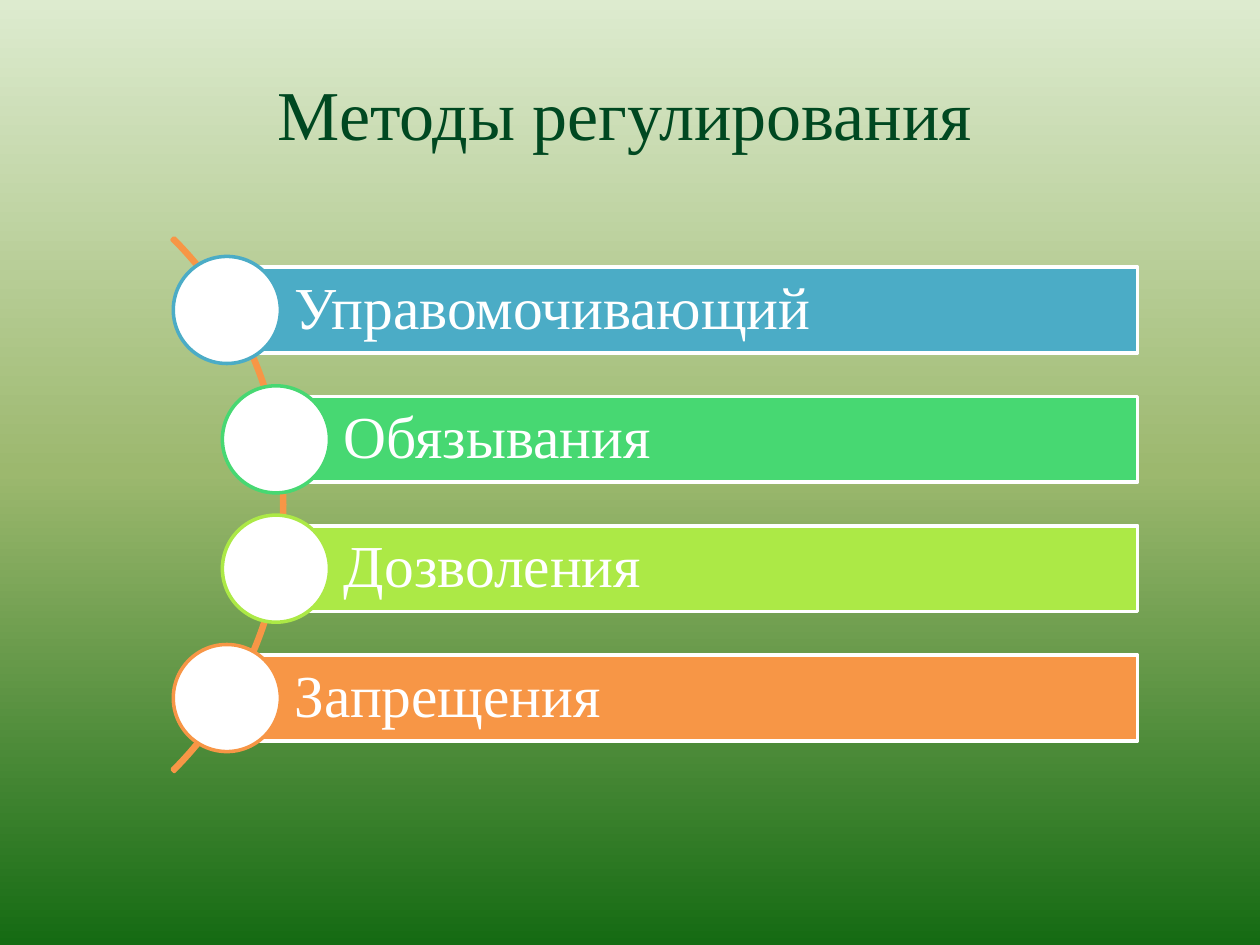
from lxml import etree
from pptx import Presentation
from pptx.dml.color import RGBColor
from pptx.enum import shapes, text
from pptx.oxml.ns import qn
from pptx.util import Inches, Pt

# Content
TITLE = "Методы регулирования"
METHODS = [  # label, colour, left edge of the bar
    ("Управомочивающий", "4BACC6", 1.8),
    ("Обязывания", "47D872", 2.19),
    ("Дозволения", "ACE946", 2.19),
    ("Запрещения", "F79646", 1.8),
]
BACKGROUND = [(0, "DDEBCF"), (50, "9CB86E"), (100, "156B13")]

# Layout in inches
FIRST_TOP, LAST_TOP = 2.12, 5.2
BAR_RIGHT, BAR_HEIGHT = 9.03, 0.68
CIRCLE = 0.85
ARC = (-3.73, 1.01, 5.99, 5.99)


def rgb(value):
    return RGBColor.from_string(value)


def add_solid(parent, color):
    fill = etree.SubElement(parent, qn("a:solidFill"))
    etree.SubElement(fill, qn("a:srgbClr"), val=color)


def add_shape(slide, kind, box, line, fill=None):
    sp = slide.shapes.add_shape(kind, *map(Inches, box))
    sp.shadow.inherit = False
    if fill:
        sp.fill.solid()
        sp.fill.fore_color.rgb = rgb(fill)
    else:
        sp.fill.background()
    sp.line.color.rgb = rgb(line)
    sp.line.width = Pt(2)
    return sp


def write(sp, words, size, color, align, anchor, wrap=True,
          left=0.1, spacing=1.0, outline=None):
    tf = sp.text_frame
    tf.word_wrap = wrap
    tf.vertical_anchor = anchor
    tf.margin_left = Inches(left)
    tf.margin_right = Inches(0.09)
    p = tf.paragraphs[0]
    p.alignment = align
    p.line_spacing = spacing
    r = p.add_run()
    r.text = words
    r.font.name = "Times New Roman"
    r.font.size = Pt(size)
    r.font.color.rgb = rgb(color)
    if outline:
        line_color, width = outline
        ln = etree.Element(qn("a:ln"), w=str(Pt(width)))
        add_solid(ln, line_color)
        r.font._element.insert(0, ln)


prs = Presentation()
prs.slide_width, prs.slide_height = Inches(10), Inches(7.5)
s = prs.slides.add_slide(prs.slide_layouts[6])

# Background gradient, top to bottom
bg = s.background.fill
bg.gradient()
bg.gradient_angle = 270
stops = s.element.find(".//" + qn("a:gsLst"))
stops.clear()
for percent, color in BACKGROUND:
    stop = etree.SubElement(stops, qn("a:gs"), pos=str(percent * 1000))
    etree.SubElement(stop, qn("a:srgbClr"), val=color)

# Title
title = s.shapes.add_textbox(*map(Inches, (2.07, 0.51, 5.77, 0.77)))
title.text_frame.auto_size = text.MSO_AUTO_SIZE.SHAPE_TO_FIT_TEXT
write(title, TITLE, 40, "004821", text.PP_ALIGN.CENTER, text.MSO_ANCHOR.TOP,
      wrap=False, outline=("00B050", 1.45))

# Arc behind the list: 315 to 45 degrees, very thin
arc = add_shape(s, shapes.MSO_SHAPE.BLOCK_ARC, ARC, "F79646")
for i, value in enumerate((189, 27, 0.004)):
    arc.adjustments[i] = value

# Bars, each with a circle centred on its left edge
pitch = (LAST_TOP - FIRST_TOP) / (len(METHODS) - 1)
for i, (label, color, left) in enumerate(METHODS):
    top = FIRST_TOP + i * pitch
    bar = add_shape(s, shapes.MSO_SHAPE.RECTANGLE,
                    (left, top, BAR_RIGHT - left, BAR_HEIGHT), "FFFFFF", color)
    write(bar, label, 34, "FFFFFF", text.PP_ALIGN.LEFT, text.MSO_ANCHOR.MIDDLE,
          left=0.54, spacing=0.9)
    add_shape(s, shapes.MSO_SHAPE.OVAL,
              (left - CIRCLE / 2, top + (BAR_HEIGHT - CIRCLE) / 2, CIRCLE, CIRCLE),
              color, "FFFFFF")

prs.save("out.pptx")
